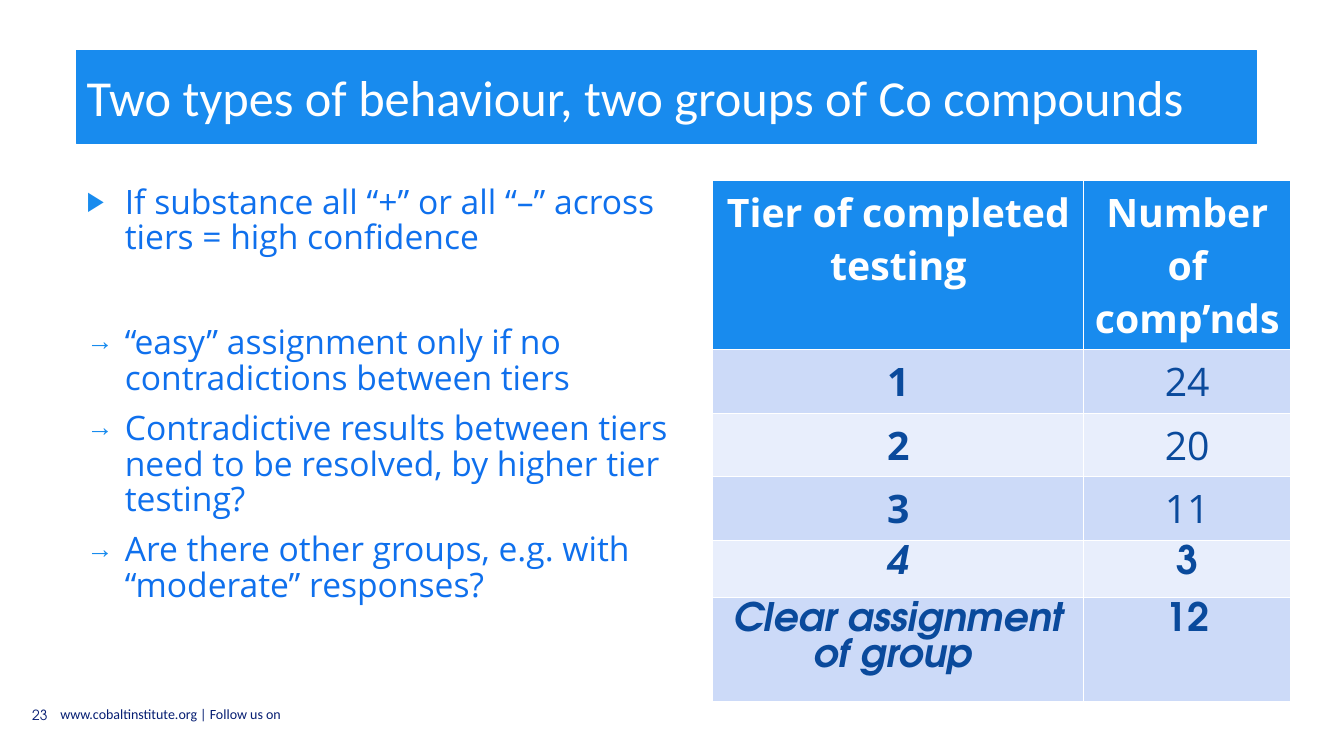
from lxml.etree import SubElement
from pptx import Presentation
from pptx.dml.color import RGBColor
from pptx.enum.text import MSO_ANCHOR as Anchor, MSO_AUTO_SIZE as AutoSize, PP_ALIGN as Align
from pptx.oxml.ns import qn
from pptx.util import Inches, Pt

BLUE = RGBColor(0x18, 0x8B, 0xEE)
BODY_BLUE = RGBColor(0x0F, 0x70, 0xED)
TABLE_BLUE = RGBColor(0x0A, 0x4A, 0x9C)
FOOTER_NAVY = RGBColor(0x05, 0x1D, 0x72)
BAND_DARK = RGBColor(0xCC, 0xDA, 0xF8)
BAND_LIGHT = RGBColor(0xE8, 0xEE, 0xFC)
WHITE = RGBColor(0xFF, 0xFF, 0xFF)

HEADING, BODY, ACCENT = "Calibri", "Open Sans", "TeX Gyre Adventor"
LEFT, CONTENT_TOP = 0.76, 1.79
INDENT = Inches(0.38)

# Bullet, space before in points, text
POINTS = [
    ("▶", 0, "If substance all “+” or all “–” across tiers = high confidence"),
    ("→", 49, "“easy” assignment only if no contradictions between tiers"),
    ("→", 10, "Contradictive results between tiers need to be resolved, by higher tier testing?"),
    ("→", 10, "Are there other groups, e.g. with “moderate” responses?"),
]

# Row height, font, tier, number of compounds
TIERS = [
    (1.68, BODY, "Tier of completed testing", "Number of comp’nds"),
    (0.63, BODY, "1", "24"),
    (0.63, BODY, "2", "20"),
    (0.63, BODY, "3", "11"),
    (0.46, ACCENT, "4", "3"),
    (0.81, ACCENT, "Clear assignment of group ", "12"),
]
COLUMN_WIDTHS = (3.68, 2.05)


def add_run(paragraph, text, font_name, size, color, bold=False, italic=False):
    run = paragraph.add_run()
    run.text = text
    font = run.font
    font.name, font.size = font_name, Pt(size)
    font.bold, font.italic = bold, italic
    font.color.rgb = color


def add_text_frame(slide, box):
    frame = slide.shapes.add_textbox(*map(Inches, box)).text_frame
    frame.word_wrap = True
    return frame


def set_bullet(paragraph, character):
    properties = paragraph._p.get_or_add_pPr()
    properties.set("marL", str(INDENT))
    properties.set("indent", str(-INDENT))
    color = SubElement(properties, qn("a:buClr"))
    SubElement(color, qn("a:srgbClr"), val=str(BLUE))
    SubElement(properties, qn("a:buSzPct"), val="80000")
    SubElement(properties, qn("a:buFont"), typeface="Arial")
    SubElement(properties, qn("a:buChar"), char=character)


def build_title(slide, box):
    title = slide.shapes.title
    title.left, title.top, title.width, title.height = map(Inches, box)
    title.fill.solid()
    title.fill.fore_color.rgb = BLUE
    title.line.color.rgb = BLUE
    title.line.width = Pt(0.75)
    frame = title.text_frame
    frame.auto_size = AutoSize.NONE
    frame.vertical_anchor = Anchor.MIDDLE
    paragraph = frame.paragraphs[0]
    paragraph.alignment = Align.LEFT
    add_run(paragraph, "Two types of behaviour, two groups of Co compounds", HEADING, 36, WHITE)


def build_points(slide, box):
    frame = add_text_frame(slide, box)
    for index, (bullet, space, text) in enumerate(POINTS):
        paragraph = frame.add_paragraph() if index else frame.paragraphs[0]
        set_bullet(paragraph, bullet)
        paragraph.line_spacing = 0.89
        paragraph.space_before = Pt(space)
        add_run(paragraph, text, BODY, 24, BODY_BLUE)


def build_tier_table(slide, left, top):
    width, height = sum(COLUMN_WIDTHS), sum(tier[0] for tier in TIERS)
    table = slide.shapes.add_table(
        len(TIERS), len(COLUMN_WIDTHS), *map(Inches, (left, top, width, height))).table
    for column, column_width in zip(table.columns, COLUMN_WIDTHS):
        column.width = Inches(column_width)
    for row_index, (row_height, font_name, *texts) in enumerate(TIERS):
        table.rows[row_index].height = Inches(row_height)
        header = row_index == 0
        fill = BLUE if header else BAND_DARK if row_index % 2 else BAND_LIGHT
        accent = font_name == ACCENT
        for column_index, text in enumerate(texts):
            first = column_index == 0
            cell = table.cell(row_index, column_index)
            cell.fill.solid()
            cell.fill.fore_color.rgb = fill
            paragraph = cell.text_frame.paragraphs[0]
            paragraph.alignment = Align.CENTER
            add_run(paragraph, text, font_name, 28, WHITE if header else TABLE_BLUE,
                    bold=header or first or accent, italic=accent and first)


def build_footer(slide, number_box, address_box):
    number = add_text_frame(slide, number_box)
    number.vertical_anchor = Anchor.MIDDLE
    number.paragraphs[0].alignment = Align.RIGHT
    add_run(number.paragraphs[0], "23", ACCENT, 10, FOOTER_NAVY)
    address = add_text_frame(slide, address_box)
    add_run(address.paragraphs[0], "www.cobaltinstitute.org | Follow us on",
            HEADING, 10, FOOTER_NAVY)


def main():
    presentation = Presentation()
    presentation.slide_width, presentation.slide_height = Inches(13.33), Inches(7.5)
    slide = presentation.slides.add_slide(presentation.slide_layouts[5])
    build_title(slide, (LEFT, 0.5, 11.7, 0.92))
    build_points(slide, (LEFT, CONTENT_TOP, 6.32, 4.79))
    build_tier_table(slide, 7.07, CONTENT_TOP)
    build_footer(slide, (0.18, 6.89, 0.39, 0.4), (0.5, 6.95, 3.69, 0.27))
    presentation.save("out.pptx")


if __name__ == "__main__":
    main()
